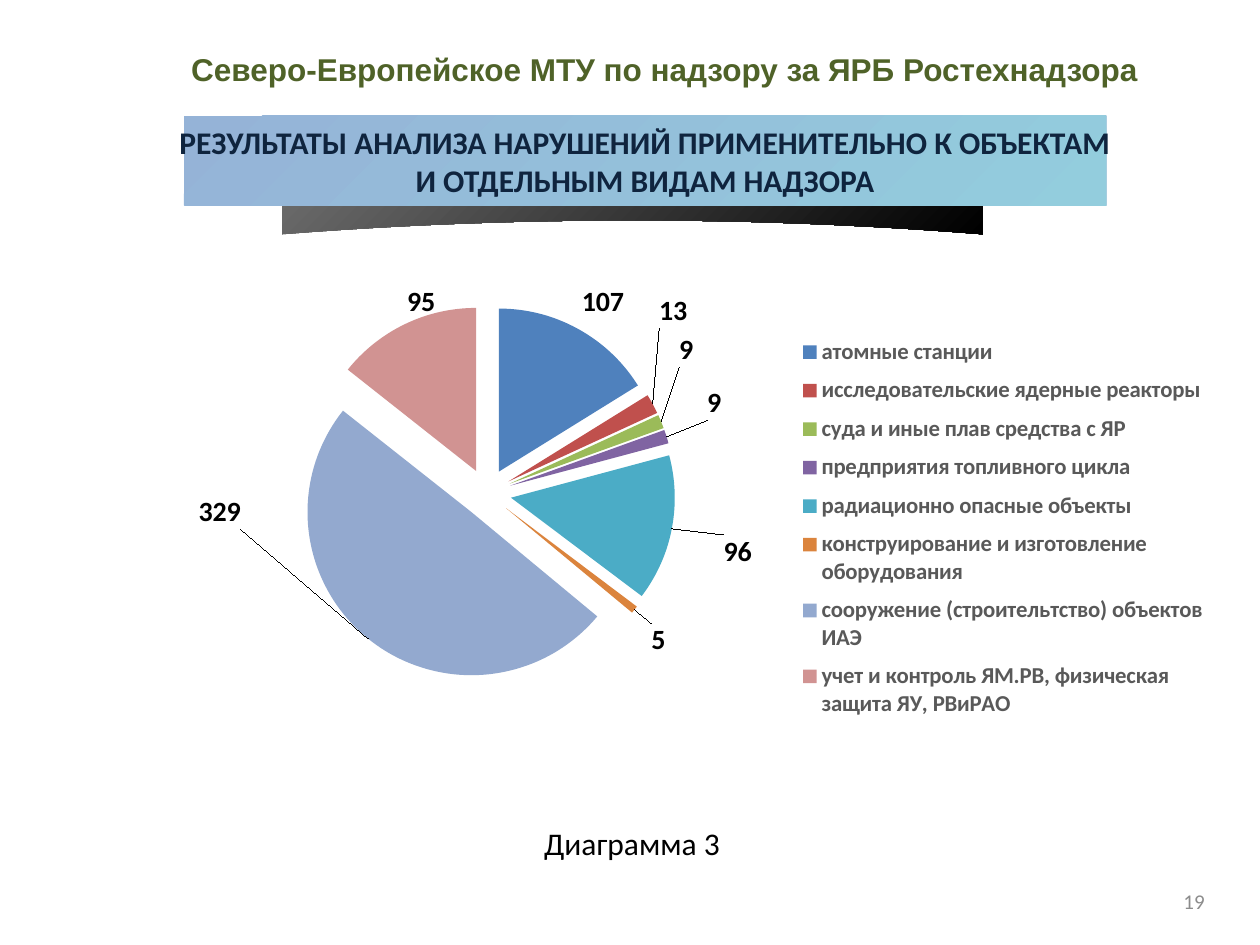
import pptx
import pptx.chart.data
import pptx.dml.color
import pptx.enum.chart
import pptx.enum.shapes
import pptx.enum.text
import pptx.oxml
import pptx.oxml.ns
import pptx.util
from pptx.util import Inches

COLORS = {
    "heading": "4F6228", "banner_text": "0F243E", "banner_start": "95B3D7",
    "banner_end": "93CDDD", "shade_start": "6C6C6C", "shade_end": "000000",
    "legend": "595959", "number": "8C8C8C", "text": "000000",
}
# Category, value, slice colour, label shift as a share of the chart (x, y)
SLICES = [
    ("атомные станции", 107, "4F81BD", (0.0, -0.01)),
    ("исследовательские ядерные реакторы", 13, "C0504D", None),
    ("суда и иные плав средства с ЯР", 9, "9BBB59", (0.01, -0.11)),
    ("предприятия топливного цикла", 9, "8064A2", (0.03, -0.03)),
    ("радиационно опасные объекты", 96, "4BACC6", (0.04, 0.01)),
    ("конструирование и изготовление оборудования", 5, "DB843D", (0.01, 0.02)),
    ("сооружение (строительтство) объектов ИАЭ", 329, "93A9CF", (-0.11, -0.32)),
    ("учет и контроль ЯМ.РВ, физическая защита ЯУ, РВиРАО", 95, "D19392", (0.03, 0.0)),
]
ALIGN = pptx.enum.text.PP_ALIGN
MIDDLE = pptx.enum.text.MSO_ANCHOR.MIDDLE


def rgb(name):
    return pptx.dml.color.RGBColor.from_string(COLORS.get(name, name))


def set_font(font, size, color, bold=False, face="Calibri"):
    font.size = pptx.util.Pt(size)
    font.bold = bold
    font.name = face
    font.color.rgb = rgb(color)


def paint_gradient(shape, start, end):
    """Fill diagonally from top left to bottom right, without outline or shadow."""
    shape.shadow.inherit = False
    shape.line.fill.background()
    shape.fill.gradient()
    shape.fill.gradient_angle = 315
    for stop, color in zip(shape.fill.gradient_stops, (start, end)):
        stop.color.rgb = rgb(color)


def add_heading(page, left, top, width, height):
    title = page.shapes.title
    title.left, title.top, title.width, title.height = left, top, width, height
    frame = title.text_frame
    frame.text = "Северо-Европейское МТУ по надзору за ЯРБ Ростехнадзора"
    frame.auto_size = pptx.enum.text.MSO_AUTO_SIZE.NONE
    frame.vertical_anchor = MIDDLE
    para = frame.paragraphs[0]
    para.alignment = ALIGN.CENTER
    para.line_spacing = 0.9
    set_font(para.font, 18, "heading", True, "Arial")


def add_curved_shade(page, left, top, width, height):
    """Draw the strip under the banner, whose lower edge is a shallow arch."""
    steps = 24
    rise = Inches(0.11)
    arch = []
    for step in range(steps + 1):
        share = 1 - 2 * step / steps
        arch.append((left + width * (1 + share) / 2, top + height - rise * (1 - share ** 2)))
    builder = page.shapes.build_freeform(int(arch[0][0]), int(arch[0][1]))
    upper = [(left, top + Inches(0.1)), (left + width / 2, top),
             (left + width, top + Inches(0.1))]
    builder.add_line_segments([(int(x), int(y)) for x, y in arch[1:] + upper], close=True)
    paint_gradient(builder.convert_to_shape(), "shade_start", "shade_end")


def add_banner(page, left, top, width, height):
    add_curved_shade(page, left + Inches(0.78), top + Inches(0.54),
                     Inches(5.56), Inches(0.4))
    banner = page.shapes.add_shape(pptx.enum.shapes.MSO_SHAPE.RECTANGLE,
                                   left, top, width, height)
    paint_gradient(banner, "banner_start", "banner_end")
    frame = banner.text_frame
    frame.word_wrap = False
    frame.vertical_anchor = MIDDLE
    frame.text = ("РЕЗУЛЬТАТЫ АНАЛИЗА НАРУШЕНИЙ ПРИМЕНИТЕЛЬНО К ОБЪЕКТАМ\n"
                  "И ОТДЕЛЬНЫМ ВИДАМ НАДЗОРА")
    for para in frame.paragraphs:
        para.alignment = ALIGN.CENTER
        set_font(para.font, 18, "banner_text", True)


def place_part(parent, index, modes, **values):
    """Give a chart part a manual layout, as shares of the chart."""
    for old in parent.findall(pptx.oxml.ns.qn("c:layout")):
        parent.remove(old)
    settings = {**modes, **values}
    inner = "".join(f'<c:{tag} val="{value}"/>' for tag, value in settings.items())
    parent.insert(index, pptx.oxml.parse_xml(
        f'<c:layout {pptx.oxml.ns.nsdecls("c")}>'
        f'<c:manualLayout>{inner}</c:manualLayout></c:layout>'))


def style_slices(series):
    outside = pptx.enum.chart.XL_LABEL_POSITION.OUTSIDE_END
    labels = series.data_labels
    labels.show_value = True
    labels.position = pptx.enum.chart.XL_LABEL_POSITION.BEST_FIT
    set_font(labels.font, 16, "text", True)
    for index, (_, _, color, shift) in enumerate(SLICES):
        point = series.points[index]
        point.format.fill.solid()
        point.format.fill.fore_color.rgb = rgb(color)
        if shift:
            set_font(point.data_label.font, 16, "text", True)
            point.data_label.position = outside


def add_violations_pie(page, left, top, width, height):
    data = pptx.chart.data.CategoryChartData()
    data.categories = [name for name, _, _, _ in SLICES]
    data.add_series("Series 1", [value for _, value, _, _ in SLICES])
    chart = page.shapes.add_chart(pptx.enum.chart.XL_CHART_TYPE.PIE,
                                  left, top, width, height, data).chart
    chart.has_title = False
    set_font(chart.font, 10, "text")
    chart.plots[0].vary_by_categories = True
    style_slices(chart.plots[0].series[0])

    chart.has_legend = True
    chart.legend.position = pptx.enum.chart.XL_LEGEND_POSITION.RIGHT
    chart.legend.include_in_layout = False
    set_font(chart.legend.font, 13, "legend", True)

    root = chart.element
    edges = {"xMode": "edge", "yMode": "edge"}
    place_part(root.xpath("//c:plotArea")[0], 0, {"layoutTarget": "inner", **edges},
               x=0.065, y=0.043, w=0.546, h=0.804)
    place_part(root.xpath("//c:legend")[0], 1, edges, x=0.61, y=0.09, w=0.38, h=0.86)
    shifts = [shift for _, _, _, shift in SLICES if shift]
    for label, (x, y) in zip(root.xpath("//c:dLbl"), shifts):
        place_part(label, 1, {}, x=x, y=y)
    root.xpath("//c:dPt")[0].addprevious(pptx.oxml.parse_xml(
        f'<c:explosion {pptx.oxml.ns.nsdecls("c")} val="15"/>'))


def add_note(page, text, size, color, alignment, wrap, left, top, width, height):
    frame = page.shapes.add_textbox(left, top, width, height).text_frame
    frame.word_wrap = wrap
    frame.vertical_anchor = MIDDLE
    frame.text = text
    para = frame.paragraphs[0]
    para.alignment = alignment
    set_font(para.font, size, color)


def main():
    deck = pptx.Presentation()
    deck.slide_width, deck.slide_height = Inches(10), Inches(7.5)
    page = deck.slides.add_slide(deck.slide_layouts.get_by_name("Title Only"))
    add_banner(page, Inches(1.46), Inches(0.92), Inches(7.32), Inches(0.71))
    add_violations_pie(page, Inches(0.87), Inches(2.25), Inches(8.86), Inches(3.72))
    add_note(page, "19", 12, "number", ALIGN.RIGHT, True,
             Inches(7.33), Inches(6.95), Inches(2.33), Inches(0.4))
    add_heading(page, Inches(1.3), Inches(0.38), Inches(7.95), Inches(0.37))
    add_note(page, "Диаграмма 3", 18, "text", ALIGN.LEFT, False,
             Inches(4.22), Inches(6.49), Inches(1.61), Inches(0.4))
    deck.save("out.pptx")


if __name__ == "__main__":
    main()
